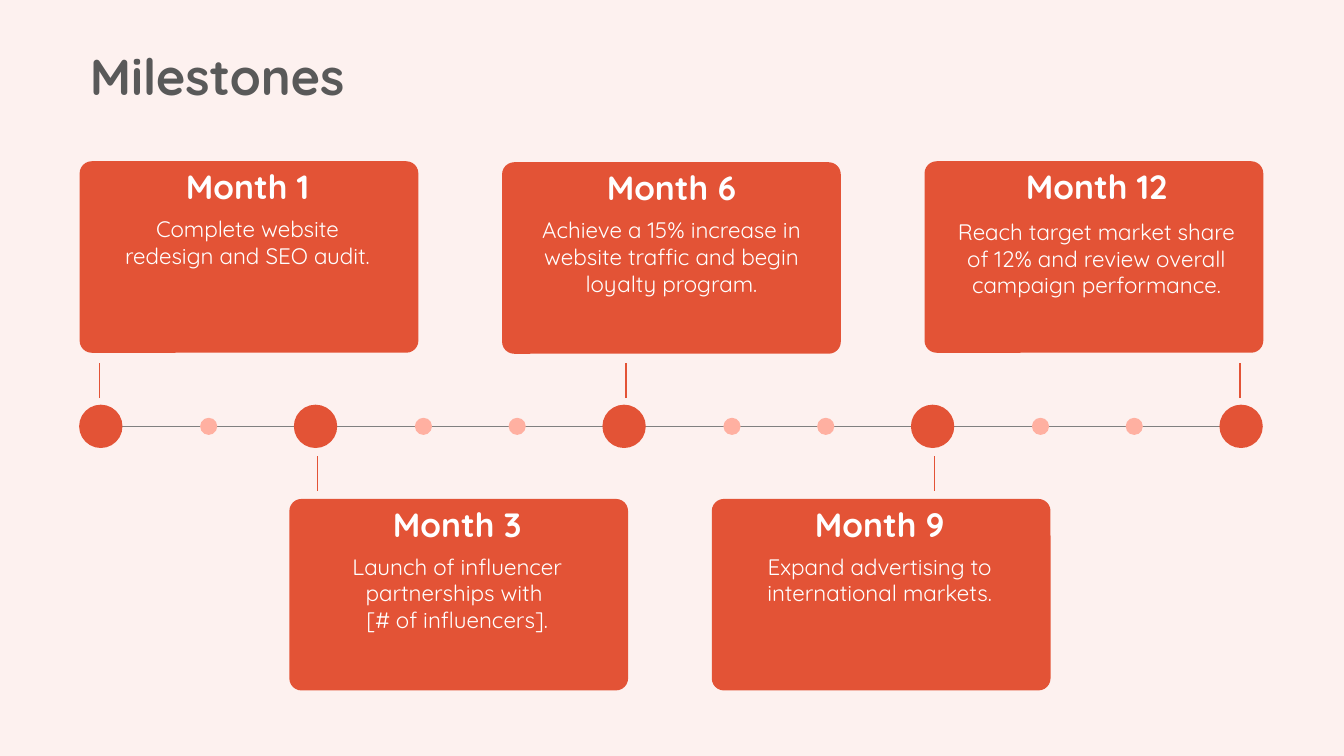
from lxml import etree
from pptx import Presentation
from pptx.dml.color import RGBColor
from pptx.enum.shapes import MSO_CONNECTOR, MSO_SHAPE
from pptx.enum.text import MSO_ANCHOR, MSO_AUTO_SIZE, PP_ALIGN
from pptx.oxml.ns import qn
from pptx.util import Inches, Pt

COLORS = {
    "background": "FDF1EF",
    "accent": "E35336",
    "minor": "FFB0A1",
    "axis": "808080",
    "title": "595959",
    "white": "FFFFFF",
}
FONT = "Quicksand"
MARGIN = 0.79
CARD_WIDTH, CARD_HEIGHT, CARD_STEP = 3.36, 1.9, 4.19
TOP_ROW, BOTTOM_ROW, BOTTOM_MARGIN = 1.6, 4.95, 2.87
AXIS_Y = 4.23
AXIS_START, AXIS_END = 0.99, 12.3
MAJOR_SIZE, MINOR_SIZE = 0.43, 0.17
QUARTER = 3.06
MAJOR_CENTERS = [1.0] + [3.13 + QUARTER * index for index in range(4)]
MINOR_CENTERS = [2.07] + [
    start + QUARTER * index for index in range(3) for start in (4.2, 5.13)
]
UPPER_STEM, LOWER_STEM = (3.6, 3.95), (4.52, 4.87)
STEMS = [
    (AXIS_START, UPPER_STEM),
    (3.15, LOWER_STEM),
    (6.21, UPPER_STEM),
    (9.27, LOWER_STEM),
    (AXIS_END, UPPER_STEM),
]
MILESTONES = [
    (MARGIN, TOP_ROW, 0.2, 2.93, 0, "Month 1",
     "Complete website redesign and SEO audit."),
    (BOTTOM_MARGIN, BOTTOM_ROW, 0.2, 2.93, 0, "Month 3",
     "Launch of influencer partnerships with \n[# of influencers]."),
    (MARGIN + CARD_STEP, TOP_ROW + 0.01, 0.17, 3.02, 0, "Month 6",
     "Achieve a 15% increase in website traffic and begin loyalty program."),
    (BOTTOM_MARGIN + CARD_STEP, BOTTOM_ROW, 0.2, 2.93, 0, "Month 9",
     "Expand advertising to international markets."),
    (MARGIN + 2 * CARD_STEP, TOP_ROW, 0.13, 3.15, 2, "Month 12",
     "Reach target market share of 12% and review overall campaign performance."),
]


def color(name):
    return RGBColor.from_string(COLORS[name])


def format_runs(paragraph, size, color_name, bold):
    for run in paragraph.runs:
        run.font.name = FONT
        run.font.size = Pt(size)
        run.font.bold = bold
        run.font.color.rgb = color(color_name)


def add_title(slide, text):
    title = slide.shapes.title
    title.left, title.top = Inches(MARGIN), Inches(0.4)
    title.width, title.height = Inches(9.3), Inches(0.71)
    frame = title.text_frame
    frame.text = text
    frame.auto_size = MSO_AUTO_SIZE.NONE
    frame.vertical_anchor = MSO_ANCHOR.TOP
    paragraph = frame.paragraphs[0]
    paragraph.alignment = PP_ALIGN.LEFT
    paragraph.line_spacing = 1.0
    paragraph.space_before = Pt(0)
    format_runs(paragraph, 36, "title", True)


def add_filled_shape(slide, kind, left, top, width, height, color_name):
    shape = slide.shapes.add_shape(
        kind, Inches(left), Inches(top), Inches(width), Inches(height)
    )
    shape.shadow.inherit = False
    shape.fill.solid()
    shape.fill.fore_color.rgb = color(color_name)
    shape.line.fill.background()
    return shape


def add_dot(slide, center, size, color_name):
    add_filled_shape(slide, MSO_SHAPE.OVAL, center - size / 2,
                     AXIS_Y - size / 2, size, size, color_name)


def add_line(slide, start_x, start_y, end_x, end_y, color_name):
    line = slide.shapes.add_connector(
        MSO_CONNECTOR.STRAIGHT,
        Inches(start_x), Inches(start_y), Inches(end_x), Inches(end_y),
    )
    line.line.color.rgb = color(color_name)
    line.line.width = Pt(1)
    etree.SubElement(line._element.spPr, qn("a:effectLst"))


def add_card(slide, left, top, inset, text_width, body_gap, month, goal):
    card = add_filled_shape(slide, MSO_SHAPE.ROUNDED_RECTANGLE, left, top,
                            CARD_WIDTH, CARD_HEIGHT, "accent")
    card.adjustments[0] = 0.063
    box = slide.shapes.add_textbox(
        Inches(left + inset), Inches(top), Inches(text_width), Inches(1.52)
    )
    frame = box.text_frame
    frame.word_wrap = True
    frame.auto_size = MSO_AUTO_SIZE.SHAPE_TO_FIT_TEXT
    heading = frame.paragraphs[0]
    heading.text = month
    heading.space_before, heading.space_after = Pt(9), Pt(6)
    body = frame.add_paragraph()
    body.text = goal
    body.space_before = Pt(body_gap)
    for paragraph, size, bold in ((heading, 24, True), (body, 16, False)):
        paragraph.alignment = PP_ALIGN.CENTER
        format_runs(paragraph, size, "white", bold)


def main():
    presentation = Presentation()
    presentation.slide_width = Inches(13.33)
    presentation.slide_height = Inches(7.5)
    slide = presentation.slides.add_slide(presentation.slide_layouts[5])
    slide.background.fill.solid()
    slide.background.fill.fore_color.rgb = color("background")
    add_title(slide, "Milestones")
    add_line(slide, AXIS_START, AXIS_Y, AXIS_END, AXIS_Y, "axis")
    for milestone in MILESTONES:
        add_card(slide, *milestone)
    for center in MAJOR_CENTERS:
        add_dot(slide, center, MAJOR_SIZE, "accent")
    for center in MINOR_CENTERS:
        add_dot(slide, center, MINOR_SIZE, "minor")
    for x, (top, bottom) in STEMS:
        add_line(slide, x, bottom, x, top, "accent")
    presentation.save("out.pptx")


if __name__ == "__main__":
    main()
